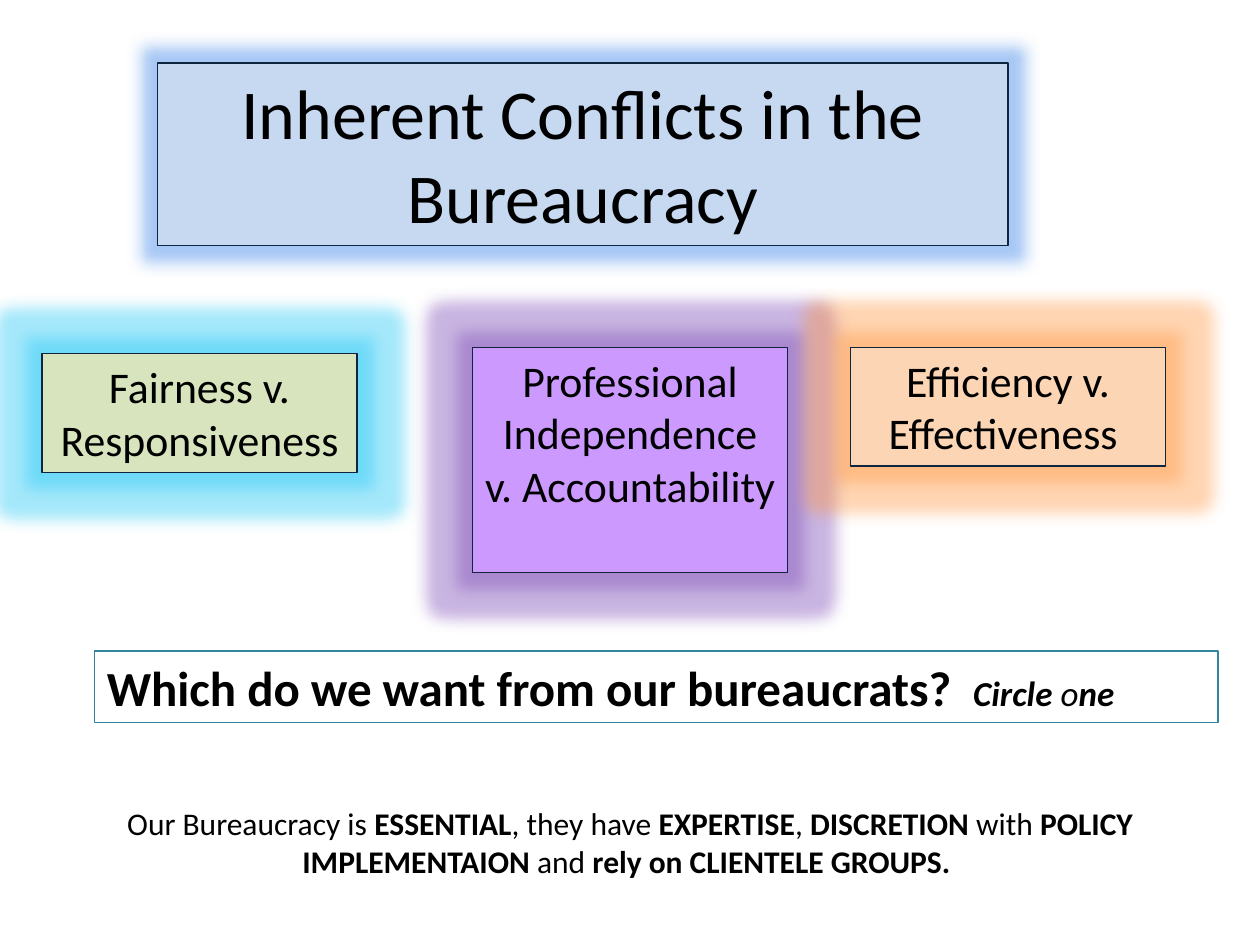
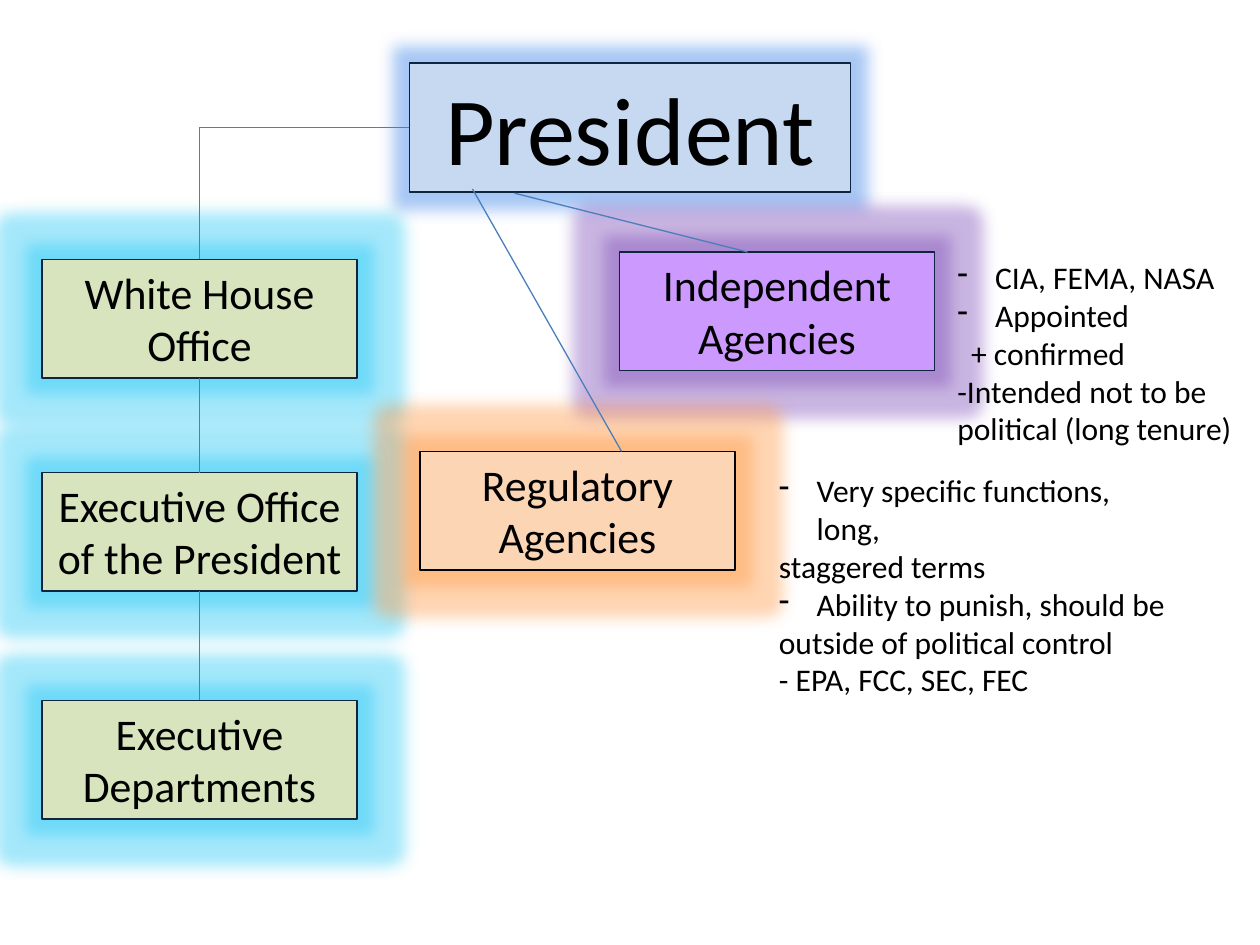
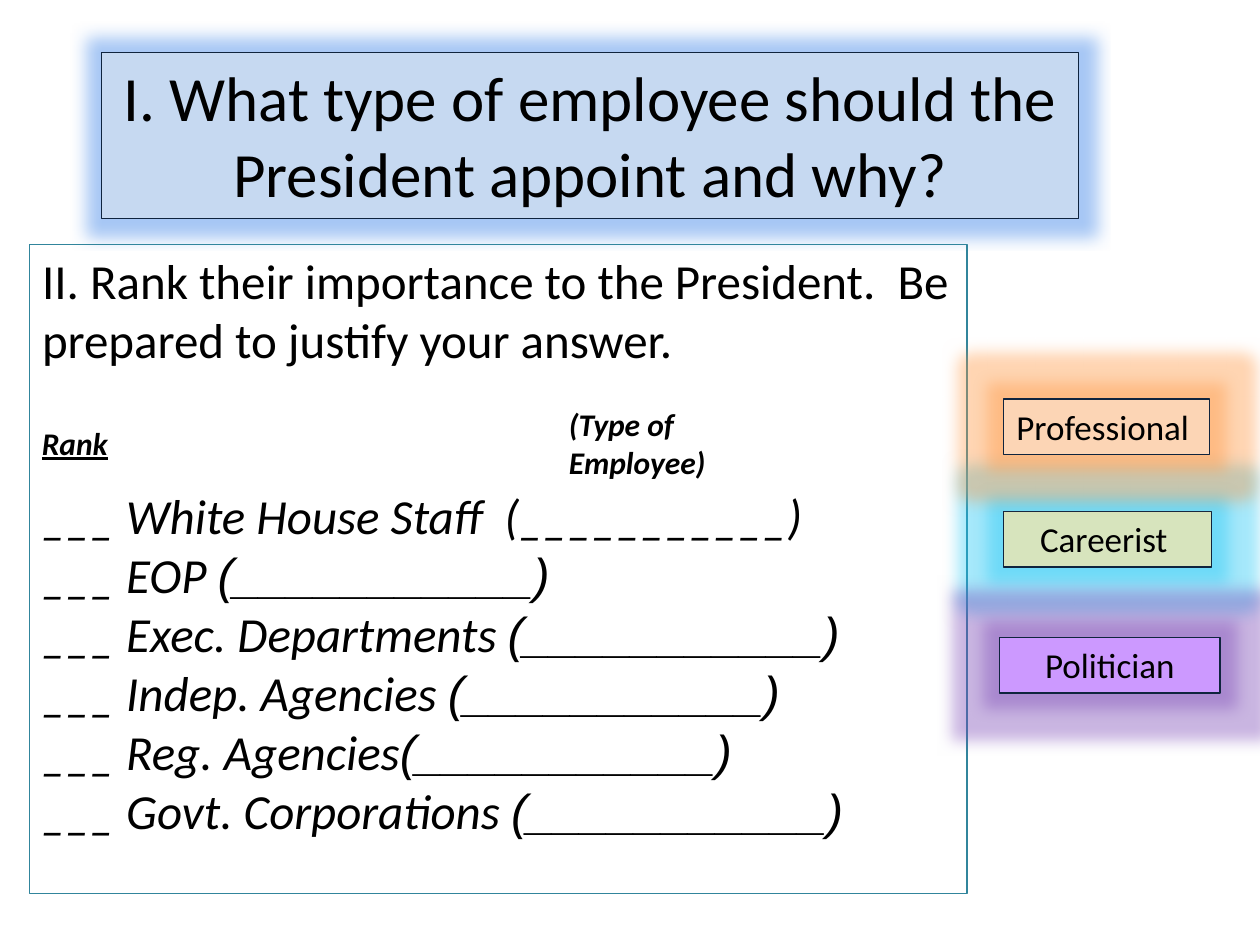
from lxml import etree
from pptx import Presentation
from pptx import util as u
from pptx.dml.color import RGBColor
from pptx.enum import shapes, text
from pptx.oxml.ns import qn

CENTER, LEFT = text.PP_ALIGN.CENTER, text.PP_ALIGN.LEFT
BLUE = ("C6D9F1", "2575E6")
GREEN = ("D7E4BD", "1EC7F5")
PURPLE = ("CC99FF", "7A46B6")
ORANGE = ("FCD5B5", "FF9640")
NAVY, TEAL, STEEL, BLACK = "0F243E", "31859C", "4B7EBC", "000000"
BLANK = "(___________)"


def color(code):
    return RGBColor.from_string(code)


class Board:
    """Draws styled elements on the current slide, on a grid of 120 columns by 90 rows."""

    def __init__(self):
        self.deck = Presentation()
        self.deck.slide_width, self.deck.slide_height = u.Inches(10), u.Inches(7.5)
        self.cell = self.deck.slide_width / 120
        self.slide = None

    def grid(self, *counts):
        return [u.Emu(round(count * self.cell)) for count in counts]

    def page(self, layout=5):
        self.slide = self.deck.slides.add_slide(self.deck.slide_layouts[layout])

    def place(self, box, at):
        box.left, box.top, box.width, box.height = self.grid(*at)

    def style(self, span, size, marks=""):
        font = span.font
        font.name = "Arial" if "a" in marks else "Calibri"
        font.size = u.Pt(size)
        font.color.rgb = color(BLACK)
        font.bold, font.italic, font.underline = (mark in marks for mark in "biu")

    def set_text(self, box, paras, size, align=LEFT):
        frame = box.text_frame
        frame.word_wrap = True
        frame.auto_size = text.MSO_AUTO_SIZE.NONE
        frame.vertical_anchor = text.MSO_ANCHOR.TOP
        for index, content in enumerate(paras):
            para = frame.add_paragraph() if index else frame.paragraphs[0]
            para.alignment = align
            para.space_before = u.Pt(0)
            if isinstance(content, str):
                para.text = content
                for span in para.runs:
                    self.style(span, size)
            else:
                for words, marks, *own_size in content:
                    span = para.add_run()
                    span.text = words
                    self.style(span, *(own_size or [size]), marks)
        return frame.paragraphs

    def outline(self, box, edge):
        box.line.color.rgb = color(edge)
        box.line.width = u.Pt(0.75)

    def glow(self, box, theme, edge):
        fill, halo = theme
        box.fill.solid()
        box.fill.fore_color.rgb = color(fill)
        self.outline(box, edge)
        box.shadow.inherit = False
        effects = box._element.spPr.find(qn("a:effectLst"))
        light = etree.SubElement(effects, qn("a:glow"), rad=str(u.Pt(18)))
        shade = etree.SubElement(light, qn("a:srgbClr"), val=halo)
        etree.SubElement(shade, qn("a:alpha"), val="40000")

    def title(self, at, words, size):
        box = self.slide.shapes.title
        self.place(box, at)
        self.glow(box, BLUE, NAVY)
        self.set_text(box, [words], size, CENTER)
        return box

    def label(self, column, row, paras, theme, width=30, height=11.3, size=25, edge=NAVY):
        box = self.slide.shapes.add_shape(
            shapes.MSO_SHAPE.RECTANGLE, *self.grid(column, row, width, height))
        self.glow(box, theme, edge)
        self.set_text(box, paras, size, CENTER)
        return box

    def frame(self, at, paras, size):
        box = self.slide.shapes.add_shape(shapes.MSO_SHAPE.RECTANGLE, *self.grid(*at))
        box.fill.background()
        box.shadow.inherit = False
        self.outline(box, TEAL)
        self.set_text(box, paras, size)

    def body(self, at, paras, size):
        box = self.slide.placeholders[1]
        self.place(box, at)
        self.outline(box, TEAL)
        lines = self.set_text(box, paras, size)
        for para in lines:
            self.indent(para, 0, 0)
        return lines

    def note(self, at, paras, size=18, align=LEFT):
        box = self.slide.shapes.add_textbox(*self.grid(*at))
        return self.set_text(box, paras, size, align)

    def indent(self, para, margin, first, bullet=None):
        props = para._p.get_or_add_pPr()
        props.set("marL", str(u.Inches(margin)))
        props.set("indent", str(u.Inches(first)))
        if bullet:
            etree.SubElement(props, qn("a:buChar"), char=bullet)
        else:
            etree.SubElement(props, qn("a:buNone"))

    def dashes(self, paras, indexes):
        for index in indexes:
            self.indent(paras[index], 0.3, -0.3, "-")

    def line(self, *ends, kind=shapes.MSO_CONNECTOR.STRAIGHT):
        link = self.slide.shapes.add_connector(kind, *self.grid(*ends))
        self.outline(link, STEEL)
        etree.SubElement(link._element.spPr, qn("a:effectLst"))
        return link

    def join(self, start, start_side, end, end_side, bent=False):
        kind = shapes.MSO_CONNECTOR.ELBOW if bent else shapes.MSO_CONNECTOR.STRAIGHT
        link = self.line(0, 0, 0, 0, kind=kind)
        link.begin_connect(start, start_side)
        link.end_connect(end, end_side)
        if bent:
            link._element.spPr.find(qn("a:prstGeom")).set("prst", "bentConnector2")


def conflicts(board):
    board.page()
    board.frame((9, 62, 107, 6.8), [[
        ("Which do we want from our bureaucrats?  ", "b"),
        ("Circle ", "bi", 20), ("o", "i", 20), ("ne", "bi", 20)]], 28)
    board.title((15, 6, 81, 17.4), "Inherent Conflicts in the Bureaucracy", 40)
    board.label(4, 33.7, ["Fairness v.", "Responsiveness"], GREEN)
    board.label(45, 33.1, ["Professional Independence v. Accountability"], PURPLE, height=21.4)
    board.label(81, 33.1, ["Efficiency v.", "Effectiveness "], ORANGE)
    board.note((4, 76, 112, 8.5), [[
        ("Our Bureaucracy is ", ""), ("ESSENTIAL", "b"), (", they have ", ""),
        ("EXPERTISE", "b"), (", ", ""), ("DISCRETION ", "b"), ("with", ""),
        (" POLICY IMPLEMENTAION ", "b"), ("and", ""),
        (" rely on CLIENTELE GROUPS. ", "b")]], align=CENTER)


def president(board):
    board.page()
    chief = board.title((39, 6, 42, 12.3), "President", 55)
    staff = board.label(4, 24.7, ["White House Office"], GREEN)
    office = board.label(4, 45, ["Executive Office of the President"], GREEN)
    departments = board.label(4, 66.7, ["Executive", "Departments"], GREEN)
    board.join(chief, 1, staff, 0, bent=True)
    board.join(staff, 2, office, 0)
    board.join(office, 2, departments, 0)
    board.label(59, 24, ["Independent Agencies"], PURPLE)
    independent = board.note((90, 24, 29.5, 23), [
        "CIA, FEMA, NASA", "Appointed", "+ confirmed",
        "-Intended not to be", "political (long tenure)"])
    board.dashes(independent, (0, 1))
    board.indent(independent[2], 0.11, 0)
    board.line(49, 18.4, 71.2, 24)
    board.label(40, 43, ["Regulatory Agencies"], ORANGE, edge=BLACK)
    regulatory = board.note((73, 44.3, 40.4, 23), [
        "Very specific functions,\vlong,", "staggered terms",
        "Ability to punish, should be", "outside of political control",
        "- EPA, FCC, SEC, FEC"])
    board.dashes(regulatory, (0, 2))
    board.line(45, 18, 59.2, 43)


def ranking(board):
    board.page(1)
    groups = ["EOP ", "Exec. Departments ", "Indep. Agencies ",
              "Reg. Agencies", "Govt. Corporations "]
    lines = board.body((2.8, 23.3, 89.3, 61.8), [
        "II. Rank their importance to the President.  Be prepared to justify your answer.",
        [("___ White House Staff  " + BLANK, "i")],
        *[[("___ " + group, "i"), (BLANK, "ia")] for group in groups]], 28)
    lines[1].space_before = u.Pt(67)
    board.title((9.7, 5, 93, 15.8),
                "I. What type of employee should the President appoint and why?", 36)
    small = {"height": 5.3, "size": 20}
    board.label(95.6, 48.7, ["Careerist "], GREEN, 19.8, **small)
    board.label(95.2, 60.7, ["Politician"], PURPLE, 21, **small)
    board.label(95.6, 38, ["Professional "], ORANGE, 19.6, **small)
    board.note((2.8, 39.8, 10.3, 4.8), [[("Rank", "biu")]])
    board.note((53, 38, 18, 8.5), [[("(Type of Employee)", "bi")]])


def main():
    board = Board()
    for draw in (conflicts, president, ranking):
        draw(board)
    board.deck.save("out.pptx")


if __name__ == "__main__":
    main()
